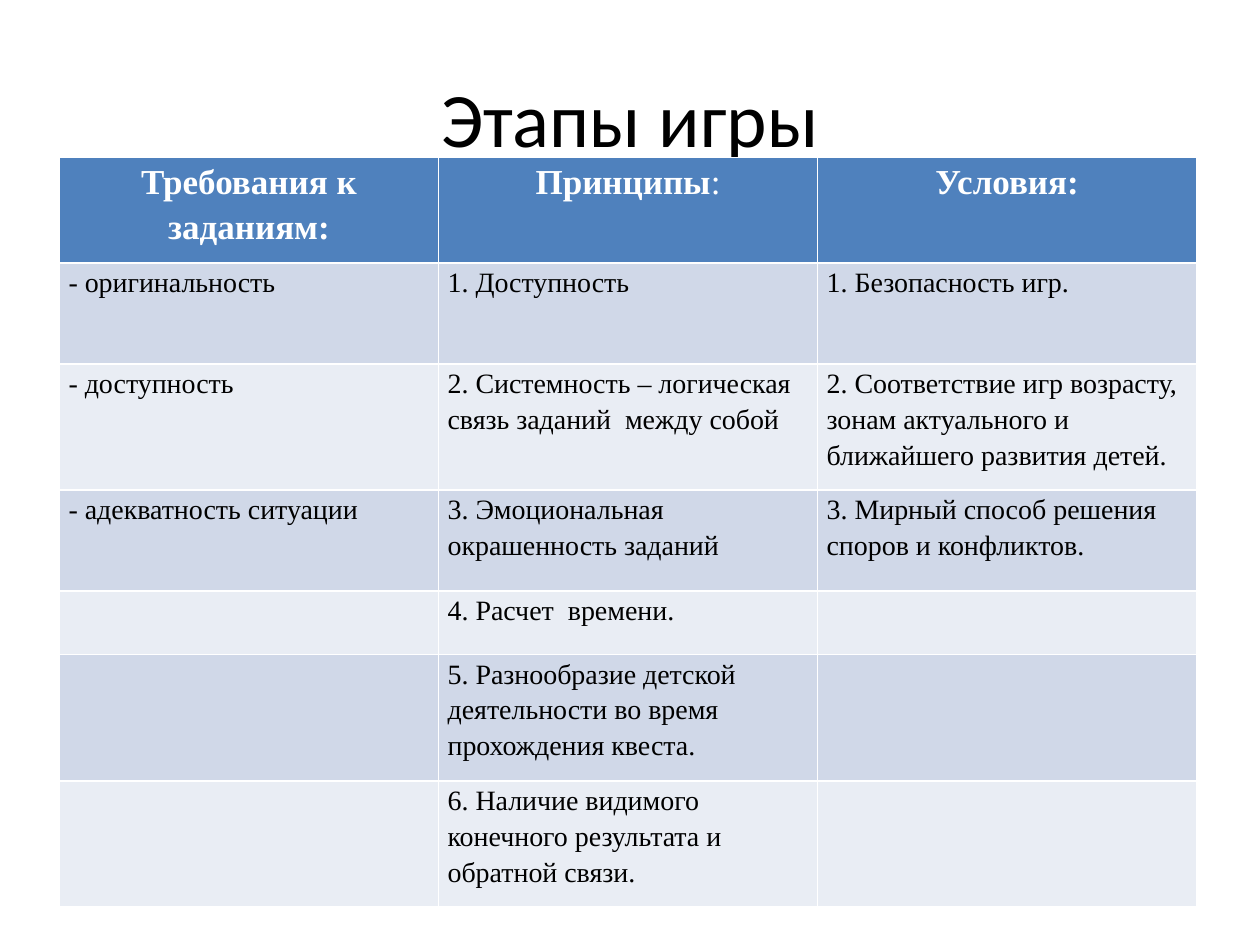
"""Build a slide with a table of game requirements, principles and conditions."""
from pptx import Presentation
from pptx.dml.color import RGBColor
from pptx.enum import text
from pptx.util import Pt

BLACK = RGBColor(0x00, 0x00, 0x00)
WHITE = RGBColor(0xFF, 0xFF, 0xFF)
BLUE = RGBColor(0x4F, 0x81, 0xBD)
BANDS = (RGBColor(0xE9, 0xED, 0xF4), RGBColor(0xD0, 0xD8, 0xE8))

TITLE = "Этапы игры"
HEADER = (
    [("Требования к заданиям:", True)],
    [("Принципы", True), (":", False)],
    [("Условия:", True)],
)
COLUMNS = (
    ["- оригинальность", "- доступность", "- адекватность ситуации"],
    [
        "1. Доступность",
        "2. Системность – логическая связь заданий  между собой",
        "3. Эмоциональная окрашенность заданий",
        "4. Расчет  времени.",
        "5. Разнообразие детской деятельности во время прохождения квеста.",
        "6. Наличие видимого конечного результата и обратной связи.",
    ],
    [
        "1. Безопасность игр.",
        "2. Соответствие игр возрасту, зонам актуального и ближайшего развития детей.",
        "3. Мирный способ решения споров и конфликтов.",
    ],
)
ROW_HEIGHTS = (60.3, 57.6, 72.2, 57.6, 36.3, 72.2, 72.2)
COLUMN_WIDTH = 216.6


def set_font(para, name, size, color):
    para.font.name = name
    para.font.size = Pt(size)
    para.font.color.rgb = color


def add_title(page):
    box = page.shapes.add_textbox(Pt(36), Pt(21.6), Pt(648), Pt(90))
    frame = box.text_frame
    frame.word_wrap = True
    frame.vertical_anchor = text.MSO_ANCHOR.MIDDLE
    para = frame.paragraphs[0]
    para.text = TITLE
    para.alignment = text.PP_ALIGN.CENTER
    set_font(para, "Calibri", 44, BLACK)


def style_cell(cell, fill, size, color):
    cell.margin_left = cell.margin_right = Pt(5.2)
    cell.margin_top = cell.margin_bottom = 0
    cell.fill.solid()
    cell.fill.fore_color.rgb = fill
    para = cell.text_frame.paragraphs[0]
    para.line_spacing = 1.15
    set_font(para, "Times New Roman", size, color)
    return para


def add_game_table(page):
    table = page.shapes.add_table(
        len(ROW_HEIGHTS), len(COLUMNS), Pt(34), Pt(90),
        Pt(COLUMN_WIDTH * len(COLUMNS)), Pt(sum(ROW_HEIGHTS))).table
    for row, height in zip(table.rows, ROW_HEIGHTS):
        row.height = Pt(height)
    for index, (heading, entries) in enumerate(zip(HEADER, COLUMNS)):
        table.columns[index].width = Pt(COLUMN_WIDTH)
        para = style_cell(table.cell(0, index), BLUE, 20, WHITE)
        para.alignment = text.PP_ALIGN.CENTER
        for words, bold in heading:
            span = para.add_run()
            span.text = words
            span.font.bold = bold
        for row in range(1, len(ROW_HEIGHTS)):
            para = style_cell(table.cell(row, index), BANDS[row % 2], 16, BLACK)
            if row <= len(entries):
                para.text = entries[row - 1]


def main():
    deck = Presentation()
    deck.slide_width, deck.slide_height = Pt(720), Pt(540)
    page = deck.slides.add_slide(deck.slide_layouts[6])
    add_title(page)
    add_game_table(page)
    deck.save("out.pptx")


if __name__ == "__main__":
    main()
